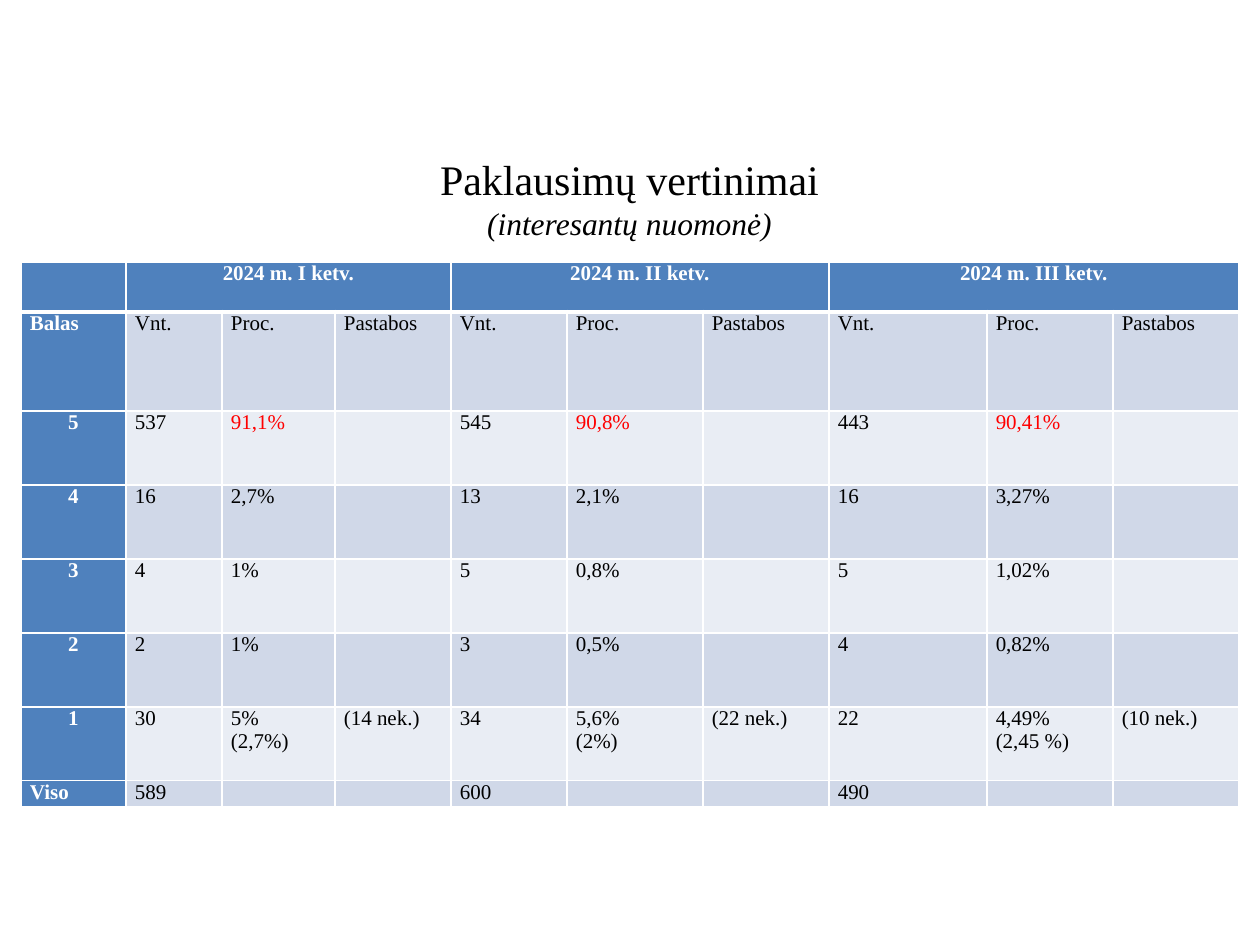
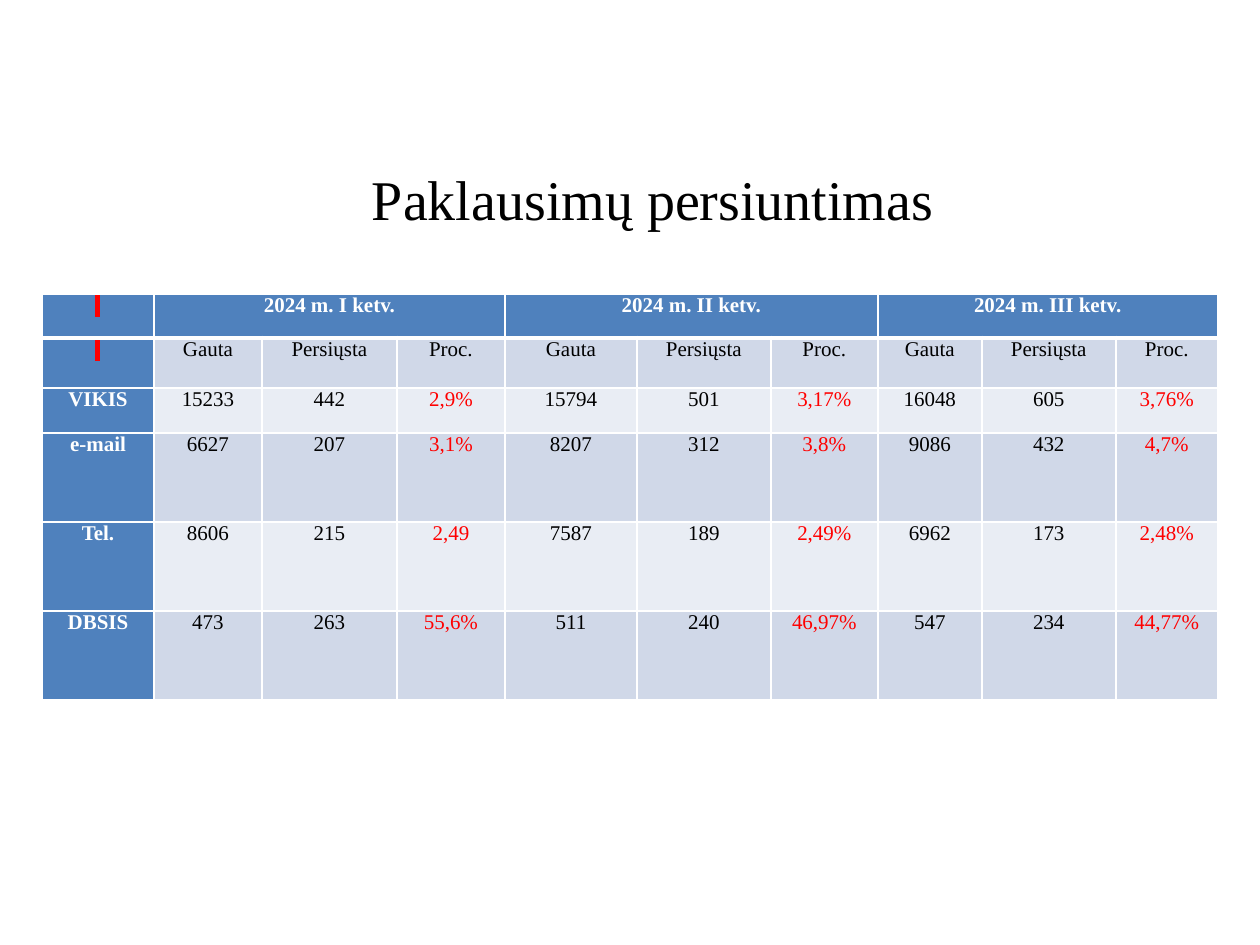
from lxml.etree import SubElement as Sub
from pptx import Presentation
from pptx.dml.color import RGBColor as Rgb
from pptx.enum.text import MSO_ANCHOR as Anchor, PP_ALIGN as Align
from pptx.oxml.ns import qn
from pptx.util import Emu, Pt

SCALE = 914400 / 126
FACE = "Times New Roman"
HUES = {"head": "4F81BD", "odd": "D0D8E8", "even": "E9EDF4",
        "white": "FFFFFF", "black": "000000", "red": "FF0000"}
TERMS = [f"2024 m. {term} ketv." for term in ("I", "II", "III")]
SPAN = 3

SCORES = {
    "title": {"box": (426, 147, 407, 102),
              "lines": [("Paklausimų vertinimai", {"size": Pt(24)}),
                        ("(interesantų nuomonė)", {"size": Pt(18), "italic": True})]},
    "grid": {"spot": (21, 262),
             "cols": [105, 96, 113, 116, 116, 136, 126, 158, 126, 126],
             "rows": [50, 99] + [74] * 5 + [26],
             "red": {(2, col) for col in (2, 5, 8)},
             "mid": False, "mark": False,
             "data": [
                 ["Balas"] + ["Vnt.", "Proc.", "Pastabos"] * SPAN,
                 ["5", "537", "91,1%", "", "545", "90,8%", "", "443", "90,41%", ""],
                 ["4", "16", "2,7%", "", "13", "2,1%", "", "16", "3,27%", ""],
                 ["3", "4", "1%", "", "5", "0,8%", "", "5", "1,02%", ""],
                 ["2", "2", "1%", "", "3", "0,5%", "", "4", "0,82%", ""],
                 ["1", "30", "5%\n(2,7%)", "(14 nek.)", "34", "5,6%\n(2%)",
                  "(22 nek.)", "22", "4,49%\n(2,45 %)", "(10 nek.)"],
                 ["Viso", "589", "", "", "600", "", "", "490", "", ""]]},
}
SENT = {
    "title": {"box": (357, 158, 592, 81),
              "lines": [("Paklausimų persiuntimas", {"size": Pt(32)})]},
    "grid": {"spot": (42, 294),
             "cols": [112, 108, 135, 108, 132, 134, 107, 104, 134, 102],
             "rows": [44, 50, 45] + [89] * 3,
             "red": {(row, col) for row in range(2, 6) for col in (3, 6, 9)},
             "mid": True, "mark": True,
             "data": [
                 [""] + ["Gauta", "Persiųsta", "Proc."] * SPAN,
                 ["VIKIS", "15233", "442", "2,9%", "15794", "501", "3,17%",
                  "16048", "605", "3,76%"],
                 ["e-mail", "6627", "207", "3,1%", "8207", "312", "3,8%",
                  "9086", "432", "4,7%"],
                 ["Tel.", "8606", "215", "2,49", "7587", "189", "2,49%",
                  "6962", "173", "2,48%"],
                 ["DBSIS", "473", "263", "55,6%", "511", "240", "46,97%",
                  "547", "234", "44,77%"]]},
}


def px(num):
    """Turn px into EMU."""
    return Emu(round(num * SCALE))


def put(obj, **vals):
    """Set each given value on an object."""
    for name, val in vals.items():
        setattr(obj, name, val)


def write(para, text, hue, **look):
    """Add one styled run to a paragraph."""
    run = para.add_run()
    run.text = text
    put(run.font, name=FACE, **look)
    run.font.color.rgb = Rgb.from_string(HUES[hue])
    return run


def title(slide, box, lines):
    """Draw the centred title lines in a box."""
    frame = slide.shapes.add_textbox(*map(px, box)).text_frame
    put(frame, word_wrap=False, vertical_anchor=Anchor.MIDDLE)
    for num, (text, look) in enumerate(lines):
        para = frame.add_paragraph() if num else frame.paragraphs[0]
        para.alignment = Align.CENTER
        write(para, text, "black", **look)


def edge(cell, row):
    """Give a cell white borders, thick below the header."""
    props = cell._tc.get_or_add_tcPr()
    wide = {"T": row == 1, "B": row == 0}
    for side in "LRTB":
        line = Sub(props, qn(f"a:ln{side}"), w=str(Pt(3 if wide.get(side) else 1)))
        fill = Sub(line, qn("a:solidFill"))
        Sub(fill, qn("a:srgbClr"), val=HUES["white"])


def flag(run):
    """Mark a run with a red highlight."""
    props = run.font._element
    mark = Sub(props, qn("a:highlight"))
    Sub(mark, qn("a:srgbClr"), val=HUES["red"])
    props.find(qn("a:solidFill")).addnext(mark)


def place(row, col, text, mid):
    """Choose the alignment of a cell."""
    if mid or row == 0 or (col == 0 and text.isdigit()):
        return Align.CENTER
    return Align.JUSTIFY if row == 1 or col == 0 else Align.LEFT


def fill(cell, row, col, text, red, mid, mark):
    """Style one cell and write its text."""
    head = row == 0 or col == 0
    edge(cell, row)
    cell.fill.solid()
    tone = "head" if head else "odd" if row % 2 else "even"
    cell.fill.fore_color.rgb = Rgb.from_string(HUES[tone])
    put(cell, margin_left=px(9), margin_right=px(9), margin_top=0, margin_bottom=0)
    hue = "white" if head else "red" if (row, col) in red else "black"
    for num, part in enumerate(text.split("\n")):
        para = cell.text_frame.add_paragraph() if num else cell.text_frame.paragraphs[0]
        para.alignment = place(row, col, text, mid)
        if part:
            write(para, part, hue, size=Pt(12), bold=head)
        elif mark and col == 0:
            flag(write(para, " ", hue, size=Pt(12), bold=head))
        else:
            end = Sub(para._p, qn("a:endParaRPr"), sz="1200")
            Sub(end, qn("a:latin"), typeface=FACE)


def grid(slide, spot, cols, rows, data, **style):
    """Draw the table with its merged quarter heads."""
    size = sum(cols), sum(rows)
    table = slide.shapes.add_table(len(rows), len(cols), *map(px, spot + size)).table
    for part, wide in zip(table.columns, cols):
        part.width = px(wide)
    for part, tall in zip(table.rows, rows):
        part.height = px(tall)
    top = [""] * len(cols)
    top[1::SPAN] = TERMS
    for row, texts in enumerate([top] + data):
        for col, text in enumerate(texts):
            fill(table.cell(row, col), row, col, text, **style)
    for col in range(1, len(cols), SPAN):
        table.cell(0, col).merge(table.cell(0, col + SPAN - 1))


def main():
    """Build and save the deck."""
    deck = Presentation()
    put(deck, slide_width=px(1260), slide_height=px(945))
    for page in (SCORES, SENT):
        slide = deck.slides.add_slide(deck.slide_layouts[6])
        title(slide, **page["title"])
        grid(slide, **page["grid"])
    deck.save("out.pptx")


if __name__ == "__main__":
    main()
